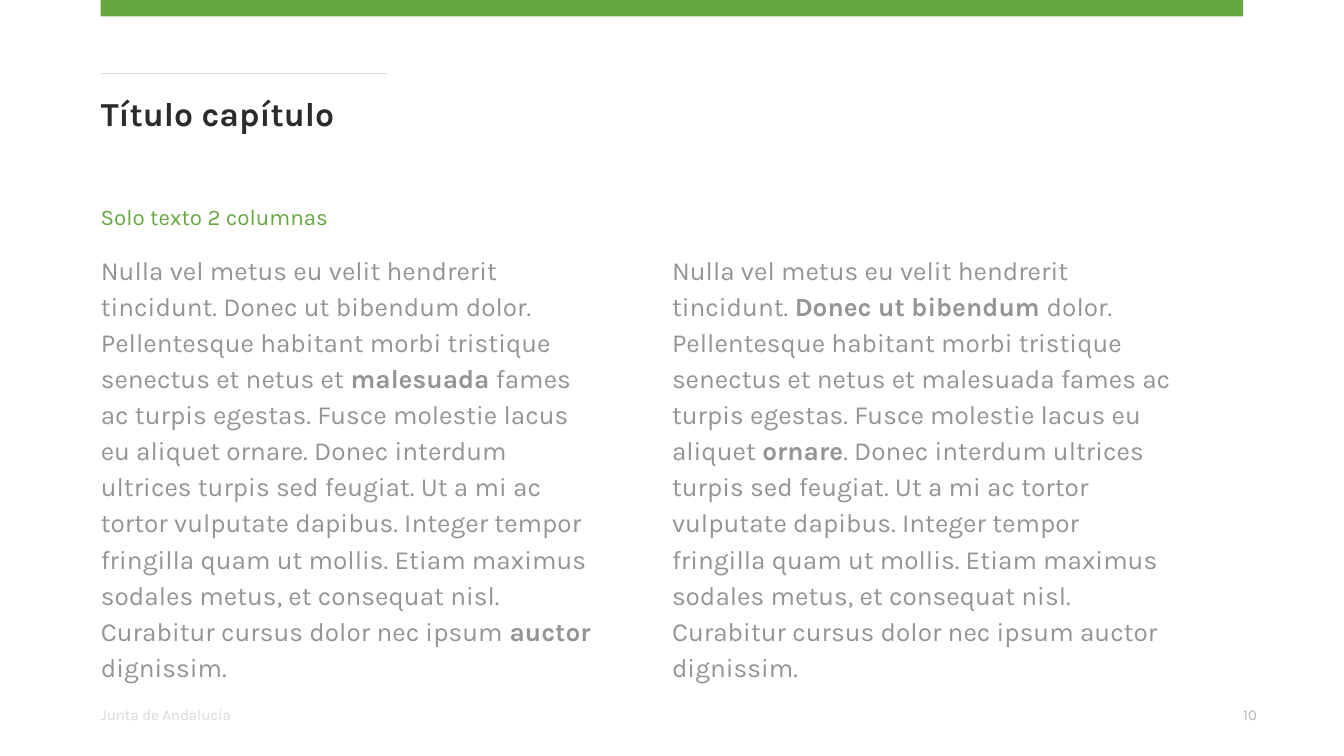
import pptx
import pptx.dml.color
import pptx.enum.shapes
import pptx.enum.text
import pptx.oxml
import pptx.oxml.ns
import pptx.util

Pt = pptx.util.Pt
FONT = "Karla"
GREEN, DARK, GREY = "64A83F", "2B2B2B", "949494"
RULE_GREY, NUMBER_GREY = "D9D9D9", "B7B7B7"
LEFT, CONTENT_WIDTH = 54, 612
HEADING_WIDTH, COLUMN_WIDTH = 232.5, 267.8

LEFT_TEXT = (
    "Nulla vel metus eu velit hendrerit tincidunt. Donec ut bibendum dolor. "
    "Pellentesque habitant morbi tristique senectus et netus et **malesuada** fames "
    "ac turpis egestas. Fusce molestie lacus eu aliquet ornare. Donec interdum "
    "ultrices turpis sed feugiat. Ut a mi ac tortor vulputate dapibus. Integer tempor "
    "fringilla quam ut mollis. Etiam maximus sodales metus, et consequat nisl. "
    "Curabitur cursus dolor nec ipsum **auctor **dignissim."
)
RIGHT_TEXT = (
    "Nulla vel metus eu velit hendrerit tincidunt. **Donec ut bibendum **dolor. "
    "Pellentesque habitant morbi tristique senectus et netus et malesuada fames ac "
    "turpis egestas. Fusce molestie lacus eu aliquet **ornare**. Donec interdum "
    "ultrices turpis sed feugiat. Ut a mi ac tortor vulputate dapibus. Integer tempor "
    "fringilla quam ut mollis. Etiam maximus sodales metus, et consequat nisl. "
    "Curabitur cursus dolor nec ipsum auctor dignissim."
)


def color(value):
    return pptx.dml.color.RGBColor.from_string(value)


def write_text(shape, text, size, fill, bold=False, spacing=1.0):
    frame = shape.text_frame
    frame.word_wrap = True
    frame.auto_size = pptx.enum.text.MSO_AUTO_SIZE.NONE
    frame.vertical_anchor = pptx.enum.text.MSO_ANCHOR.TOP
    frame.margin_left = frame.margin_right = 0
    frame.margin_top = frame.margin_bottom = 0
    para = frame.paragraphs[0]
    para.alignment = pptx.enum.text.PP_ALIGN.LEFT
    para.line_spacing = spacing
    for index, part in enumerate(text.split("**")):
        span = para.add_run()
        span.text = part
        span.font.name = FONT
        span.font.size = Pt(size)
        span.font.bold = bold or index % 2 == 1
        span.font.color.rgb = color(fill)


def add_text(page, box, text, size, fill, spacing=1.0):
    shape = page.shapes.add_textbox(*map(Pt, box))
    write_text(shape, text, size, fill, spacing=spacing)


def add_top_bar(page, box):
    bar = page.shapes.add_shape(
        pptx.enum.shapes.MSO_SHAPE.RECTANGLE, *map(Pt, box))
    bar.shadow.inherit = False
    bar.fill.solid()
    bar.fill.fore_color.rgb = color(GREEN)
    bar.line.fill.background()


def add_heading(page, box):
    left, top, width, height = box
    rule = page.shapes.add_connector(
        pptx.enum.shapes.MSO_CONNECTOR.STRAIGHT,
        Pt(left), Pt(top), Pt(left + 153.5), Pt(top))
    rule.line.color.rgb = color(RULE_GREY)
    rule.line.width = Pt(0.75)
    properties = rule.element.find(pptx.oxml.ns.qn("p:spPr"))
    properties.append(pptx.oxml.parse_xml(
        f"<a:effectLst {pptx.oxml.ns.nsdecls('a')}/>"))

    title = page.shapes.title
    title.left, title.top = Pt(left), Pt(top + 10.2)
    title.width, title.height = Pt(width), Pt(58.5)
    write_text(title, "Título capítulo", 18, DARK, bold=True)
    add_text(page, (left, top + height - 25, width, 25),
             "Solo texto 2 columnas", 12, GREEN)


def add_columns(page, box, texts):
    left, top, width, height = box
    for index, text in enumerate(texts):
        column_left = left + index * width / len(texts)
        add_text(page, (column_left, top, COLUMN_WIDTH, height),
                 text, 14, GREY, spacing=1.15)


def add_footer(page, box):
    left, top, width, height = box
    add_text(page, (left, top, 139.5, height), "Junta de Andalucía", 8, RULE_GREY)
    add_text(page, (left + width, top, 43, height), "10", 8, NUMBER_GREY)


def main():
    deck = pptx.Presentation()
    deck.slide_width, deck.slide_height = Pt(720), Pt(405)
    page = deck.slides.add_slide(deck.slide_layouts.get_by_name("Title Only"))
    add_top_bar(page, (LEFT, 0, CONTENT_WIDTH, 8.8))
    add_heading(page, (LEFT, 39.4, HEADING_WIDTH, 94.5))
    add_columns(page, (LEFT, 133.9, CONTENT_WIDTH, 216.7), (LEFT_TEXT, RIGHT_TEXT))
    add_footer(page, (LEFT, 378, CONTENT_WIDTH, 16))
    deck.save("out.pptx")


if __name__ == "__main__":
    main()
